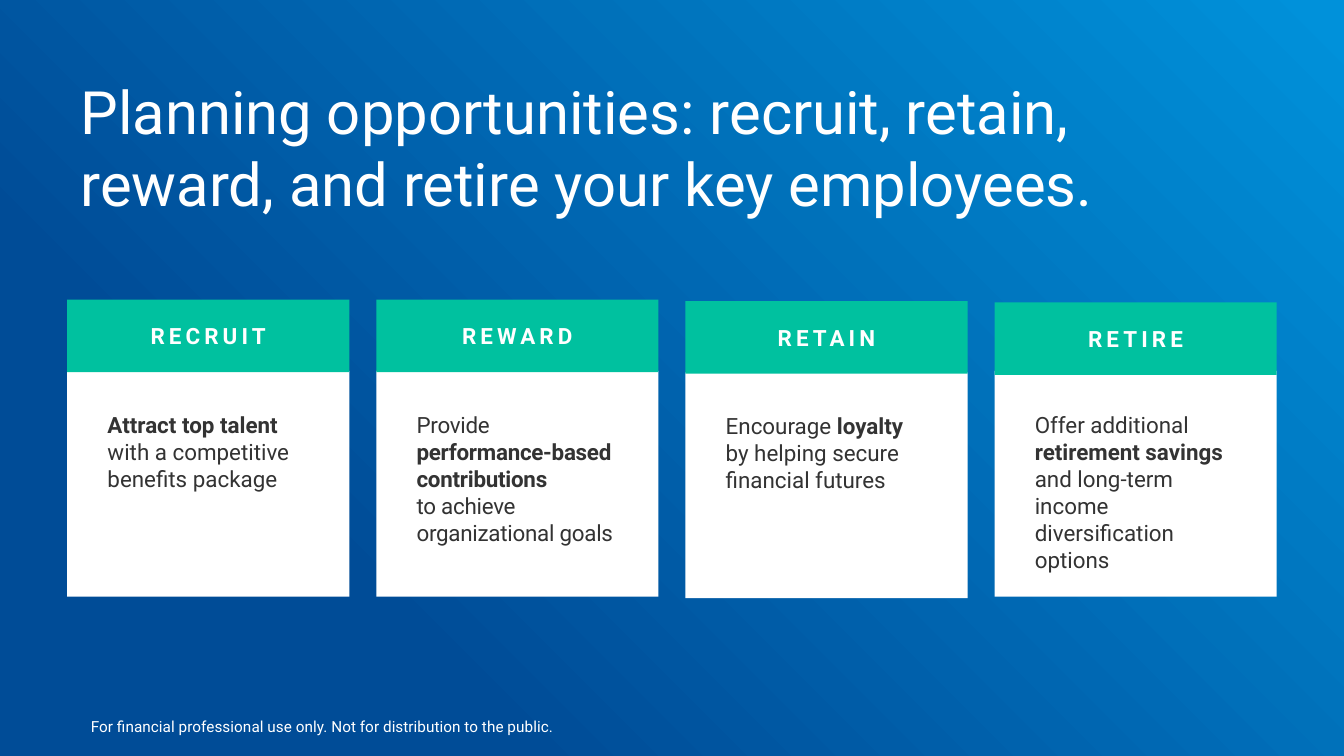
from pptx import Presentation
from pptx.dml.color import RGBColor
from pptx.enum.shapes import MSO_SHAPE
from pptx.enum.text import MSO_ANCHOR, PP_ALIGN
from pptx.util import Inches, Pt

RECTANGLE = MSO_SHAPE.RECTANGLE
TOP, MIDDLE = MSO_ANCHOR.TOP, MSO_ANCHOR.MIDDLE
LEFT, CENTER = PP_ALIGN.LEFT, PP_ALIGN.CENTER
NAVY = RGBColor(0x00, 0x4C, 0x97)
SKY = RGBColor(0x00, 0x91, 0xDA)
GREEN = RGBColor(0x00, 0xC1, 0x9F)
WHITE = RGBColor(0xFF, 0xFF, 0xFF)
CHARCOAL = RGBColor(0x33, 0x33, 0x33)
SLIDE_WIDTH = 10
SLIDE_HEIGHT = SLIDE_WIDTH * 9 / 16

presentation = Presentation()
presentation.slide_width = Inches(SLIDE_WIDTH)
presentation.slide_height = Inches(SLIDE_HEIGHT)
slide = presentation.slides.add_slide(presentation.slide_layouts[6])


def add_rectangle(left, top, width, height, color=None):
    shape = slide.shapes.add_shape(
        RECTANGLE, Inches(left), Inches(top), Inches(width), Inches(height))
    shape.shadow.inherit = False
    shape.line.fill.background()
    if color is not None:
        shape.fill.solid()
        shape.fill.fore_color.rgb = color
    return shape


def write_text(shape, runs, size, color, margins, anchor=TOP, alignment=LEFT, spacing=0):
    side, top, bottom = margins
    frame = shape.text_frame
    frame_format = {
        "word_wrap": True, "vertical_anchor": anchor,
        "margin_left": Inches(side), "margin_right": Inches(side),
        "margin_top": Inches(top), "margin_bottom": Inches(bottom),
    }
    for name, value in frame_format.items():
        setattr(frame, name, value)
    paragraph = frame.paragraphs[0]
    paragraph.alignment = alignment
    for text, bold in runs:
        if text == "\n":
            paragraph.add_line_break()
            continue
        run = paragraph.add_run()
        run.text = text
        for name, value in {"name": "Roboto", "size": Pt(size), "bold": bold}.items():
            setattr(run.font, name, value)
        run.font.color.rgb = color
        if spacing:
            run.font._element.set("spc", str(spacing))


background = add_rectangle(0, 0, SLIDE_WIDTH, SLIDE_HEIGHT)
background.fill.gradient()
background.fill.gradient_angle = 45
for stop, position, color in zip(background.fill.gradient_stops, (0.25, 0.99), (NAVY, SKY)):
    stop.position = position
    stop.color.rgb = color

title = slide.shapes.add_textbox(Inches(0.5), Inches(0.51), Inches(9), Inches(0.38))
write_text(
    title,
    [("Planning opportunities: recruit, retain, reward, and retire your key employees.", False)],
    32, WHITE, (0.1, 0.05, 0.05))

cards = [
    ("RECRUIT", 2.23, 2.76, 0, [
        ("Attract top talent ", True),
        ("with a competitive benefits package", False)]),
    ("REWARD", 2.23, 2.76, -15, [
        ("Provide ", False),
        ("performance-based contributions ", True),
        ("\n", False),
        ("to achieve organizational goals", False)]),
    ("RETAIN", 2.24, 2.77, 0, [
        ("Encourage ", False),
        ("loyalty", True),
        (" by helping secure financial futures", False)]),
    ("RETIRE", 2.25, 2.76, 0, [
        ("Offer additional ", False),
        ("retirement savings ", True),
        ("and long-term income diversification options", False)]),
]
card_lefts = [0.5 + 2.3 * index for index in range(len(cards))]
for left, (heading, heading_top, body_top, body_spacing, body_runs) in zip(card_lefts, cards):
    body = add_rectangle(left, body_top, 2.1, 1.68, WHITE)
    write_text(body, body_runs, 12, CHARCOAL, (0.3, 0.3, 0.3), spacing=body_spacing)
for left, (heading, heading_top, body_top, body_spacing, body_runs) in zip(card_lefts, cards):
    header = add_rectangle(left, heading_top, 2.1, 0.54, GREEN)
    write_text(header, [(heading, True)], 12, WHITE, (0.3, 0.05, 0.05), MIDDLE, CENTER, 220)

disclaimer = slide.shapes.add_textbox(Inches(-0.51), Inches(5.33), Inches(5.82), Inches(0.3))
write_text(
    disclaimer,
    [("For financial professional use only. Not for distribution to the public.", False)],
    8.25, WHITE, (0.07, 0.04, 0.19), MIDDLE, CENTER)

presentation.save("out.pptx")
